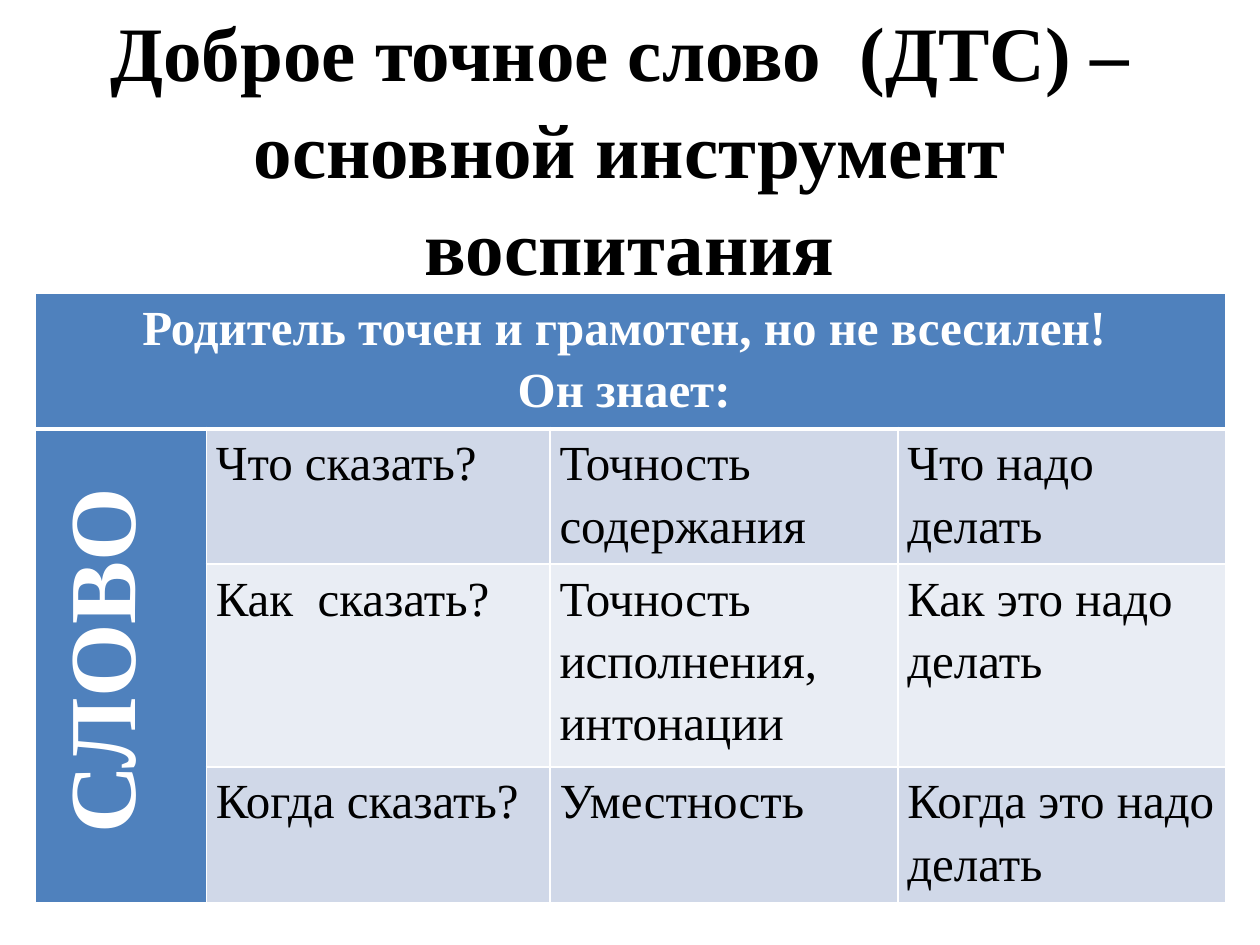
from dataclasses import dataclass

from lxml.etree import SubElement as Sub
from pptx import Presentation
from pptx.dml.color import RGBColor as Rgb
from pptx.enum.text import MSO_ANCHOR as Anchor, PP_ALIGN as Align
from pptx.oxml.ns import qn
from pptx.util import Cm, Pt

FONT = "Times New Roman"
HEX = {"head": "4F81BD", "odd": "D0D8E8", "even": "E9EDF4",
       "line": "FFFFFF", "light": "FFFFFF", "dark": "000000"}
COLS = [3.45, 6.93, 7.01, 6.6]
ROWS = [2.01, 1.4, 1.4, 1.6]


@dataclass
class Style:
    size: int
    color: str
    bold: bool
    align: Align
    space: float = 1.15


TITLE = Style(44, "dark", True, Align.CENTER, 1.05)
HEAD = Style(28, "light", True, Align.CENTER)
SIDE = Style(54, "light", True, Align.CENTER)
BODY = Style(28, "dark", False, Align.LEFT)

LINES = [
    ("Что сказать?", "Точность содержания", "Что надо делать"),
    ("Как  сказать?", "Точность исполнения, интонации", "Как это надо делать"),
    ("Когда сказать?", "Уместность", "Когда это надо делать"),
]


def write(frame, text: str, style: Style) -> None:
    frame.text = text
    for par in frame.paragraphs:
        par.alignment = style.align
        par.line_spacing = style.space
        font = par.font
        font.name, font.size, font.bold = FONT, Pt(style.size), style.bold
        font.color.rgb = Rgb.from_string(HEX[style.color])


def edge(cell, base: float = 1) -> None:
    """Draw the four cell borders; base is the width of the lower one."""
    props = cell._tc.get_or_add_tcPr()
    for side, width in zip("LRTB", (1, 1, 1, base)):
        line = Sub(props, qn(f"a:ln{side}"), w=str(Pt(width)))
        fill = Sub(line, qn("a:solidFill"))
        Sub(fill, qn("a:srgbClr"), val=HEX["line"])


def paint(cell, text: str, style: Style, fill: str) -> None:
    cell.margin_left = cell.margin_right = Cm(0.19)
    cell.margin_top = cell.margin_bottom = 0
    write(cell.text_frame, text, style)
    cell.fill.solid()
    cell.fill.fore_color.rgb = Rgb.from_string(HEX[fill])


def main() -> None:
    deck = Presentation()
    deck.slide_width, deck.slide_height = Cm(25.4), Cm(19.05)
    slide = deck.slides.add_slide(deck.slide_layouts[6])

    # Title
    box = slide.shapes.add_textbox(Cm(1.27), Cm(0.33), Cm(22.86), Cm(5.21))
    frame = box.text_frame
    frame.word_wrap = True
    frame.vertical_anchor = Anchor.MIDDLE
    write(frame, "Доброе точное слово  (ДТС) – \vосновной инструмент воспитания", TITLE)

    # Table grid
    high = Cm(12.27)
    holder = slide.shapes.add_table(len(ROWS), len(COLS), Cm(0.71), Cm(5.92),
                                    Cm(sum(COLS)), high)
    table = holder.table
    for col, width in zip(table.columns, COLS):
        col.width = Cm(width)
    for row, height in zip(table.rows, ROWS):
        row.height = Cm(height)
    holder.height = high
    for r in range(len(ROWS)):
        for c in range(len(COLS)):
            edge(table.cell(r, c), 1 if r else 3)

    # Heading across the top
    top = table.cell(0, 0)
    top.merge(table.cell(0, len(COLS) - 1))
    paint(top, "Родитель точен и грамотен, но не всесилен! \nОн знает: ", HEAD, "head")

    # Upright word at the left
    side = table.cell(1, 0)
    side.merge(table.cell(len(ROWS) - 1, 0))
    paint(side, "СЛОВО", SIDE, "head")
    side._tc.get_or_add_tcPr().set("vert", "vert270")
    side.text_frame.paragraphs[0]._p.get_or_add_pPr().set("marL", str(Cm(0.2)))

    # Questions and answers
    for r, line in enumerate(LINES, 1):
        for c, text in enumerate(line, 1):
            paint(table.cell(r, c), text, BODY, "odd" if r % 2 else "even")

    deck.save("out.pptx")


if __name__ == "__main__":
    main()
